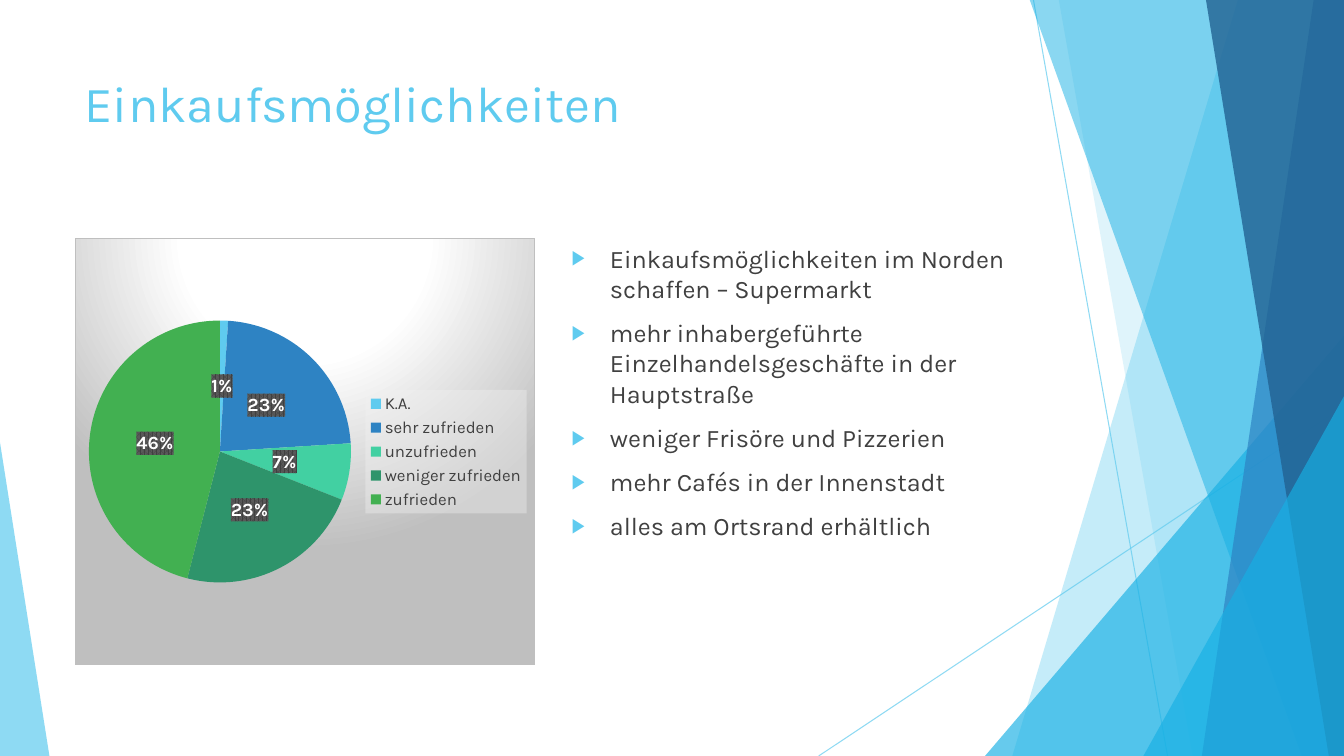
import lxml.etree
import pptx
import pptx.chart.data
import pptx.dml.color
import pptx.enum.chart
import pptx.enum.shapes
import pptx.enum.text
import pptx.oxml
import pptx.oxml.ns
import pptx.util

Inches = pptx.util.Inches
Pt = pptx.util.Pt
qn = pptx.oxml.ns.qn
FONT = "Karla"
SKY, CYAN, BLUE, NAVY, GREY = "5FCBEF", "17B0E4", "2E83C3", "226292", "404040"
WIDTH, HEIGHT, TOP = 13.33, 7.5, -0.01
NAMESPACES = pptx.oxml.ns.nsdecls("a", "c")


def paint(color_format, color, element=None, opacity=100):
    """Set a colour; with an element, also make its colours see-through."""
    color_format.rgb = pptx.dml.color.RGBColor.from_string(color)
    if element is not None:
        for node in element.iter(qn("a:srgbClr")):
            lxml.etree.SubElement(node, qn("a:alpha"), val=str(opacity * 1000))


def write(paragraph, text, size, color, space_before=0):
    paragraph.alignment = pptx.enum.text.PP_ALIGN.LEFT
    paragraph.space_before = Pt(space_before)
    run = paragraph.add_run()
    run.text = text
    run.font.name = FONT
    run.font.size = Pt(size)
    paint(run.font.color, color)


presentation = pptx.Presentation()
presentation.slide_width = Inches(WIDTH)
presentation.slide_height = Inches(HEIGHT)
slide = presentation.slides.add_slide(presentation.slide_layouts[1])
for placeholder in list(slide.placeholders):
    if placeholder.placeholder_format.idx > 1:
        placeholder.element.getparent().remove(placeholder.element)

# Decorative lines
for start_x, start_y, end_x in [(10.25, 0, 11.58), (WIDTH, 4.03, 8.12)]:
    line = slide.shapes.add_connector(
        pptx.enum.shapes.MSO_CONNECTOR.STRAIGHT,
        Inches(start_x), Inches(start_y), Inches(end_x), Inches(HEIGHT))
    line.line.width = Pt(0.75)
    paint(line.line.color, SKY, line.element.spPr, 70)
    lxml.etree.SubElement(line.element.spPr, qn("a:effectLst"))

# Facets: a band is (top left x, bottom left x) and runs to the right edge,
# a triangle is (left, top, width, apex) and stands on the bottom edge
facets = [
    ((12.28, 10.04), SKY, 36),
    ((10.5, 11.83), SKY, 20),
    ((9.77, 3.33, 3.56, 1), CYAN, 66),
    ((10.21, 12.91), CYAN, 50),
    ((13.03, 11.92), BLUE, 70),
    ((11.96, 13.18), NAVY, 80),
    ((11.34, 3.93, 1.99, 1), CYAN, 66),
    ((0, 4.39, 0.49, 0), SKY, 70),
]
for geometry, color, opacity in facets:
    if len(geometry) == 2:
        top_x, bottom_x = geometry
        outline = slide.shapes.build_freeform(Inches(top_x), Inches(TOP))
        corners = [(WIDTH, TOP), (WIDTH, HEIGHT), (bottom_x, HEIGHT)]
        outline.add_line_segments([(Inches(x), Inches(y)) for x, y in corners])
        facet = outline.convert_to_shape()
    else:
        left, top, width, apex = geometry
        facet = slide.shapes.add_shape(
            pptx.enum.shapes.MSO_SHAPE.ISOSCELES_TRIANGLE,
            Inches(left), Inches(top), Inches(width), Inches(HEIGHT - top))
        facet.adjustments[0] = apex
    facet.shadow.inherit = False
    facet.line.fill.background()
    facet.fill.solid()
    paint(facet.fill.fore_color, color, facet.element.spPr, opacity)

# Title and list
title, body = slide.shapes.title, slide.placeholders[1]
for placeholder, box in [(title, (0.74, 0.67, 9.4, 1.44)),
                         (body, (5.57, 2.36, 4.58, 4.24))]:
    placeholder.left, placeholder.top, placeholder.width, placeholder.height = map(Inches, box)
    frame = placeholder.text_frame
    frame.word_wrap = True
    frame.auto_size = pptx.enum.text.MSO_AUTO_SIZE.NONE
    frame.vertical_anchor = pptx.enum.text.MSO_ANCHOR.TOP
write(title.text_frame.paragraphs[0], "Einkaufsmöglichkeiten", 36, SKY)

wishes = [
    "Einkaufsmöglichkeiten im Norden schaffen – Supermarkt",
    "mehr inhabergeführte Einzelhandelsgeschäfte in der Hauptstraße",
    "weniger Frisöre und Pizzerien",
    "mehr Cafés in der Innenstadt",
    "alles am Ortsrand erhältlich",
]
for number, wish in enumerate(wishes):
    frame = body.text_frame
    paragraph = frame.add_paragraph() if number else frame.paragraphs[0]
    write(paragraph, wish, 18, GREY, space_before=10)
    properties = paragraph.runs[0].font and paragraph._p.get_or_add_pPr()
    properties.set("marL", str(Inches(0.38)))
    properties.set("indent", str(Inches(-0.38)))
    bullet_color = lxml.etree.SubElement(properties, qn("a:buClr"))
    lxml.etree.SubElement(bullet_color, qn("a:srgbClr"), val=SKY)
    lxml.etree.SubElement(properties, qn("a:buSzPct"), val="80000")
    lxml.etree.SubElement(properties, qn("a:buChar"), char="▶")

# Pie chart
answers = [("K.A.", 1, SKY), ("sehr zufrieden", 23, BLUE), ("unzufrieden", 7, "42D0A2"),
           ("weniger zufrieden", 23, "2E946B"), ("zufrieden", 46, "42B051")]
chart_data = pptx.chart.data.CategoryChartData()
chart_data.categories = [name for name, value, color in answers]
chart_data.add_series("Series 1", [value for name, value, color in answers])
chart = slide.shapes.add_chart(
    pptx.enum.chart.XL_CHART_TYPE.PIE,
    Inches(0.74), Inches(2.36), Inches(4.57), Inches(4.24), chart_data).chart
chart.has_title = False
chart.font.name = FONT
chart.font.size = Pt(10)
chart.has_legend = True
legend = chart.legend
legend.position = pptx.enum.chart.XL_LEGEND_POSITION.RIGHT
legend.include_in_layout = False
legend.font.name = FONT
legend.font.size = Pt(12)
paint(legend.font.color, GREY)

chart.plots[0].vary_by_categories = True
series = chart.plots[0].series[0]
for index, (name, value, color) in enumerate(answers):
    fill = series.points[index].format.fill
    fill.solid()
    paint(fill.fore_color, color)
labels = series.data_labels
labels.show_percentage = True
labels.show_value = False
labels.number_format = "0%"
labels.number_format_is_linked = False
labels.position = pptx.enum.chart.XL_LABEL_POSITION.CENTER
labels.font.name = FONT
labels.font.size = Pt(13.3)
labels.font.bold = True
paint(labels.font.color, "FFFFFF")

# Backgrounds of chart, legend and labels, each placed before the text format
backgrounds = [
    (chart.element, """<a:gradFill><a:gsLst>
        <a:gs pos="0"><a:srgbClr val="FFFFFF"/></a:gs>
        <a:gs pos="39000"><a:srgbClr val="FFFFFF"/></a:gs>
        <a:gs pos="100000"><a:srgbClr val="BFBFBF"/></a:gs></a:gsLst>
        <a:path path="circle"><a:fillToRect l="50000" t="-80000" r="50000" b="180000"/></a:path>
        </a:gradFill><a:ln w="9525"><a:solidFill><a:srgbClr val="BFBFBF"/></a:solidFill></a:ln>"""),
    (chart.element.find(".//" + qn("c:legend")),
     '<a:solidFill><a:srgbClr val="F2F2F2"><a:alpha val="39000"/></a:srgbClr></a:solidFill>'),
    (chart.element.find(".//" + qn("c:ser")).find(qn("c:dLbls")),
     """<a:pattFill prst="pct75"><a:fgClr><a:srgbClr val="404040"/></a:fgClr>
        <a:bgClr><a:srgbClr val="595959"/></a:bgClr></a:pattFill>"""),
]
for owner, content in backgrounds:
    owner.find(qn("c:txPr")).addprevious(
        pptx.oxml.parse_xml(f"<c:spPr {NAMESPACES}>{content}</c:spPr>"))

# Pie position as shares of the chart area
plot_area = chart.element.find(".//" + qn("c:plotArea"))
for layout in plot_area.findall(qn("c:layout")):
    plot_area.remove(layout)
layout = lxml.etree.Element(qn("c:layout"))
plot_area.insert(0, layout)
manual = lxml.etree.SubElement(layout, qn("c:manualLayout"))
for tag, value in [("layoutTarget", "inner"), ("xMode", "edge"), ("yMode", "edge"),
                   ("x", "0.03"), ("y", "0.19"), ("w", "0.57"), ("h", "0.62")]:
    lxml.etree.SubElement(manual, qn("c:" + tag), val=value)

presentation.save("out.pptx")
